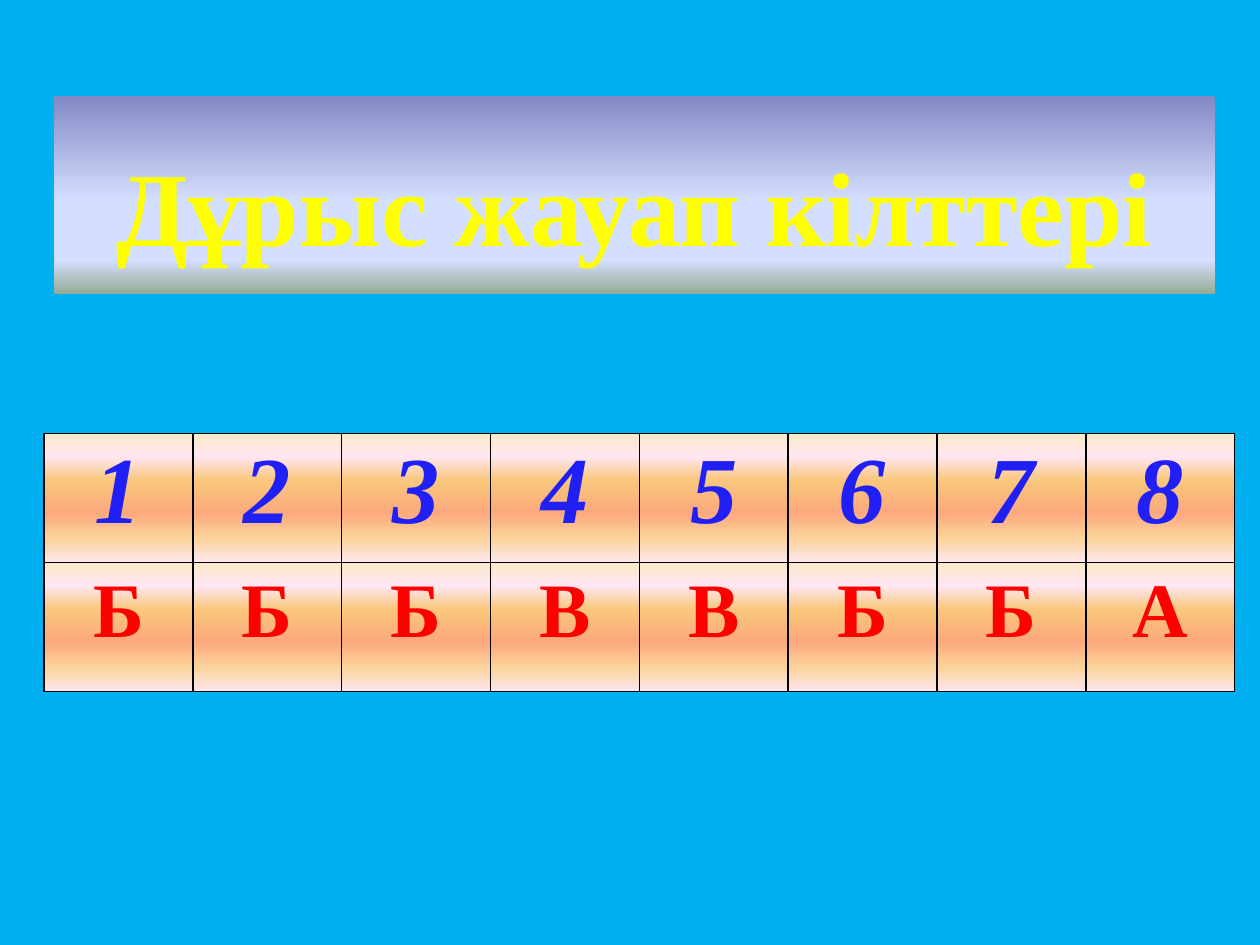
import pptx
import pptx.util
import pptx.oxml
import pptx.oxml.ns
import pptx.dml.color
import pptx.enum.text

Inches = pptx.util.Inches
Pt = pptx.util.Pt
FONT = "Times New Roman"
COLORS = {
    "back": "00B0F0",
    "title": "FFFF00",
    "edge": "FF0000",
    "number": "2020F6",
    "answer": "FF0000",
    "border": "000000",
}
TITLE_FADE = [(0, "8488C4"), (53, "D4DEFF"), (83, "D4DEFF"), (100, "96AB94")]
CELL_FADE = [(0, "FBEAC7"), (18, "FEE7F2"), (36, "FAC77D"),
             (61, "FBA97D"), (82, "FBD49C"), (100, "FEE7F2")]
NUMBERS = "12345678"
ANSWERS = "БББВВББА"


def rgb(name):
    return pptx.dml.color.RGBColor.from_string(COLORS[name])


def node(tag, attrs, inner):
    space = pptx.oxml.ns.nsdecls("a")
    return pptx.oxml.parse_xml(f"<a:{tag} {space} {attrs}>{inner}</a:{tag}>")


def fade(stops):
    """Make a gradient fill that runs from top to bottom."""
    marks = "".join(
        f'<a:gs pos="{pos * 1000}"><a:srgbClr val="{color}"/></a:gs>'
        for pos, color in stops)
    return node("gradFill", 'rotWithShape="1"',
                f'<a:gsLst>{marks}</a:gsLst><a:lin ang="5400000" scaled="0"/>')


def line(tag, color, width):
    return node(tag, f'w="{Pt(width)}"',
                f'<a:solidFill><a:srgbClr val="{COLORS[color]}"/></a:solidFill>')


def write(frame, text, size, color, italic=False):
    para = frame.paragraphs[0]
    para.alignment = pptx.enum.text.PP_ALIGN.CENTER
    run = para.add_run()
    run.text = text
    font = run.font
    font.name, font.size = FONT, Pt(size)
    font.bold, font.italic = True, italic
    font.color.rgb = rgb(color)
    return run


def add_title(slide):
    title = slide.shapes.title
    title.left, title.top = Inches(0.43), Inches(0.76)
    title.width, title.height = Inches(9.21), Inches(1.57)
    title._element.spPr.append(fade(TITLE_FADE))
    frame = title.text_frame
    frame.word_wrap = True
    frame.auto_size = pptx.enum.text.MSO_AUTO_SIZE.NONE
    frame.vertical_anchor = pptx.enum.text.MSO_ANCHOR.MIDDLE
    frame.margin_top = Inches(0.2)
    run = write(frame, "Дұрыс жауап кілттері", 60, "title")
    run.font._element.insert(0, line("ln", "edge", 1.42))


def style_cell(cell):
    props = cell._tc.get_or_add_tcPr()
    for side in ("lnL", "lnR", "lnT", "lnB"):
        props.append(line(side, "border", 1))
    props.append(fade(CELL_FADE))


def add_keys(slide):
    table = slide.shapes.add_table(
        2, len(NUMBERS), Inches(0.35), Inches(3.44),
        Inches(9.45), Inches(2.05)).table
    table.first_row = table.horz_banding = False
    for col, (number, answer) in enumerate(zip(NUMBERS, ANSWERS)):
        top, low = table.cell(0, col), table.cell(1, col)
        write(top.text_frame, number, 54, "number", italic=True)
        write(low.text_frame, answer, 44, "answer")
        style_cell(top)
        style_cell(low)


def main():
    deck = pptx.Presentation()
    deck.slide_width, deck.slide_height = Inches(10), Inches(7.5)
    slide = deck.slides.add_slide(deck.slide_layouts[5])
    back = slide.background.fill
    back.solid()
    back.fore_color.rgb = rgb("back")
    add_title(slide)
    add_keys(slide)
    deck.save("out.pptx")


if __name__ == "__main__":
    main()
